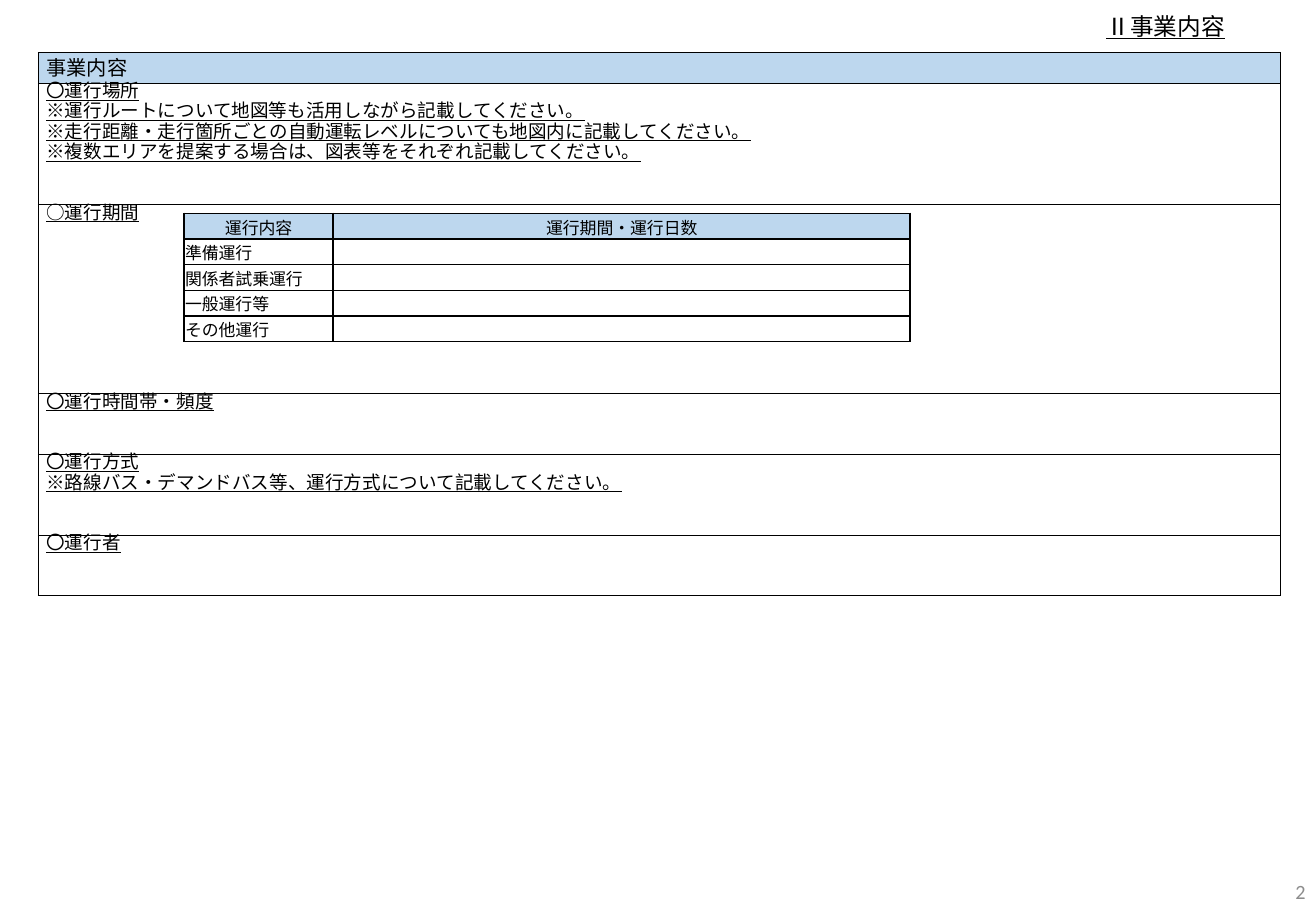
import pptx
import pptx.util
import pptx.dml.color
import pptx.enum.text
import pptx.oxml
import pptx.oxml.ns

Pt = pptx.util.Pt
RGB = pptx.dml.color.RGBColor
ALIGN = pptx.enum.text.PP_ALIGN
ANCHOR = pptx.enum.text.MSO_ANCHOR
qn = pptx.oxml.ns.qn

BLACK = RGB(0, 0, 0)
WHITE = RGB(255, 255, 255)
BLUE = RGB(0xBD, 0xD7, 0xEE)
GRAY = RGB(0x8C, 0x8C, 0x8C)
GOTHIC = "Noto Sans CJK JP"

TOPICS = [
    (18, ["事業内容"]),
    (72, ["〇運行場所",
          "※運行ルートについて地図等も活用しながら記載してください。",
          "※走行距離・走行箇所ごとの自動運転レベルについても地図内に記載してください。",
          "※複数エリアを提案する場合は、図表等をそれぞれ記載してください。"]),
    (112, ["○運行期間"]),
    (36, ["〇運行時間帯・頻度"]),
    (48, ["〇運行方式",
          "※路線バス・デマンドバス等、運行方式について記載してください。"]),
    (36, ["〇運行者"]),
]
PERIODS = [
    ("運行内容", "運行期間・運行日数"),
    ("準備運行", ""),
    ("関係者試乗運行", ""),
    ("一般運行等", ""),
    ("その他運行", ""),
]


def write(frame, lines, size, align, face=GOTHIC, color=BLACK, under=False, space=None):
    frame.text = "\n".join(lines)
    for para in frame.paragraphs:
        para.alignment = align
        para.line_spacing = space
        font = para.font
        font.size = Pt(size)
        font.name = face
        font.bold = False
        font.underline = under
        font.color.rgb = color
        style = para._p.pPr.find(qn("a:defRPr"))
        east = pptx.oxml.parse_xml(
            f'<a:ea {pptx.oxml.ns.nsdecls("a")} typeface="{face}"/>')
        style.find(qn("a:latin")).addnext(east)


def edge(cell, width):
    props = cell._tc.get_or_add_tcPr()
    for spot, side in enumerate(("lnL", "lnR", "lnT", "lnB")):
        props.insert(spot, pptx.oxml.parse_xml(
            f'<a:{side} {pptx.oxml.ns.nsdecls("a")} w="{int(Pt(width))}">'
            f'<a:solidFill><a:srgbClr val="{BLACK}"/></a:solidFill></a:{side}>'))


def pad(cell, left, top, right, base):
    cell.margin_left, cell.margin_top = Pt(left), Pt(top)
    cell.margin_right, cell.margin_bottom = Pt(right), Pt(base)


def grid(slide, left, top, widths, heights):
    frame = slide.shapes.add_table(
        len(heights), len(widths), Pt(left), Pt(top),
        Pt(sum(widths)), Pt(sum(heights)))
    table = frame.table
    table.first_row = False
    table.horz_banding = False
    for col, width in zip(table.columns, widths):
        col.width = Pt(width)
    for row, height in zip(table.rows, heights):
        row.height = Pt(height)
    return table


def topics(slide, left, top, width):
    table = grid(slide, left, top, [width], [height for height, _ in TOPICS])
    for index, (_, lines) in enumerate(TOPICS):
        cell = table.cell(index, 0)
        pad(cell, 5, 0, 5, 0)
        if index == 0:
            cell.fill.solid()
            cell.fill.fore_color.rgb = BLUE
            write(cell.text_frame, lines, 12, ALIGN.JUSTIFY)
        else:
            cell.fill.background()
            write(cell.text_frame, lines, 11, ALIGN.JUSTIFY, under=True, space=Pt(12))
        edge(cell, 0.25)


def periods(slide, left, top, width, height):
    first = 88.5
    rows = len(PERIODS)
    table = grid(slide, left, top, [first, width - first], [height / rows] * rows)
    for index, texts in enumerate(PERIODS):
        head = index == 0
        for col, text in enumerate(texts):
            cell = table.cell(index, col)
            pad(cell, 0.7, 0.7, 0.7, 0)
            cell.vertical_anchor = ANCHOR.MIDDLE
            cell.fill.solid()
            cell.fill.fore_color.rgb = BLUE if head else WHITE
            write(cell.text_frame, [text], 10, ALIGN.CENTER if head else ALIGN.LEFT)
            edge(cell, 1)


def label(slide, left, top, width, height, text, anchor, **style):
    frame = slide.shapes.add_textbox(Pt(left), Pt(top), Pt(width), Pt(height)).text_frame
    frame.word_wrap = True
    frame.vertical_anchor = anchor
    write(frame, [text], **style)


def main():
    deck = pptx.Presentation()
    deck.slide_width, deck.slide_height = Pt(780), Pt(540)
    slide = deck.slides.add_slide(deck.slide_layouts[6])
    topics(slide, 22.5, 31, 736.5)
    label(slide, 599, 514, 182, 29, "2", ANCHOR.MIDDLE,
          size=12, align=ALIGN.RIGHT, face="Calibri", color=GRAY)
    label(slide, 648.7, -4.3, 110, 31.7, "Ⅱ事業内容", ANCHOR.BOTTOM,
          size=14, align=ALIGN.LEFT, under=True, space=0.9)
    periods(slide, 109, 126.5, 430.5, 76)
    deck.save("out.pptx")


if __name__ == "__main__":
    main()
